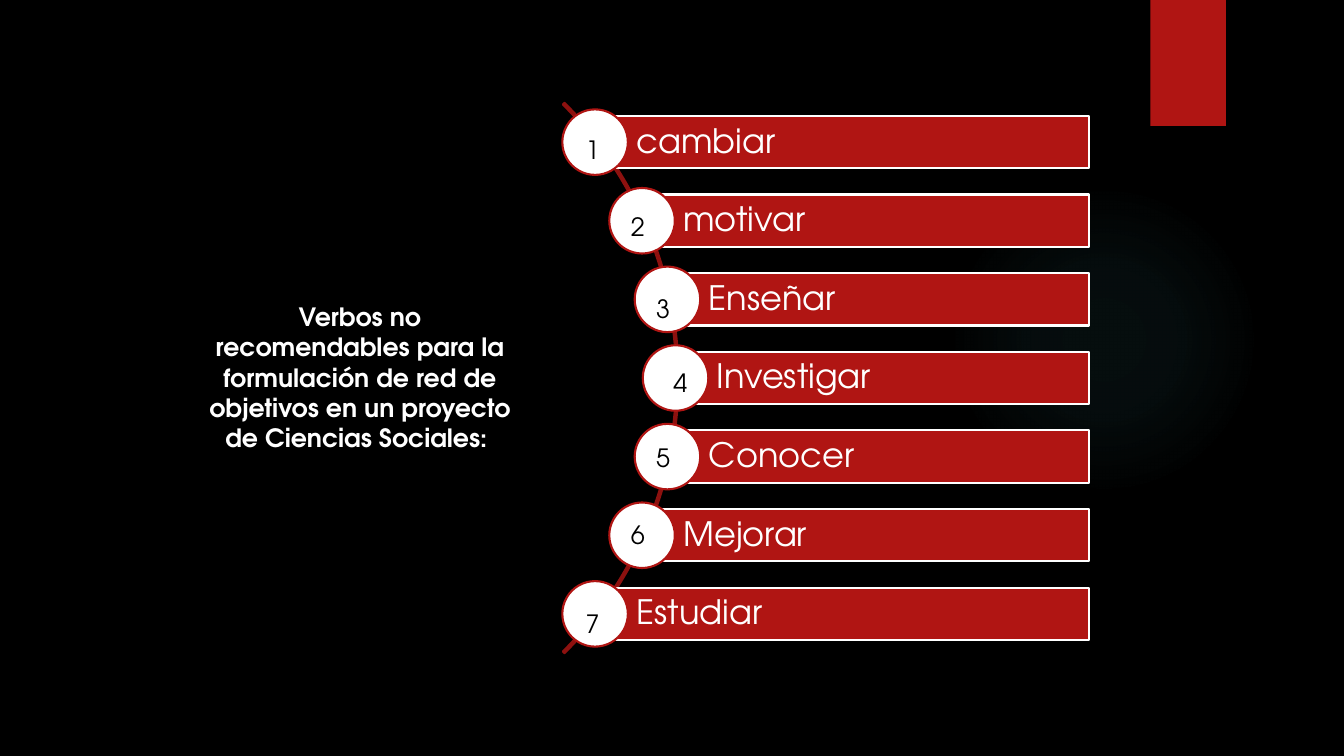
from math import sqrt

from lxml import etree
from pptx import Presentation
from pptx import util as u
from pptx.dml import color
from pptx.enum import shapes, text
from pptx.oxml import ns

FONT = "TeX Gyre Adventor"
RED, DARK_RED, WHITE, BLACK, TEAL = "B01513", "8D110F", "FFFFFF", "000000", "50B9C1"


def paint(fill, colour):
    if colour is None:
        fill.background()
    else:
        fill.solid()
        fill.fore_color.rgb = color.RGBColor.from_string(colour)


def write(frame, words, size=18, colour=BLACK, bold=False, align=text.PP_ALIGN.LEFT,
          anchor=text.MSO_ANCHOR.TOP, wrap=True, spacing=1.0, insets=(0.1, 0.05, 0.1, 0.05)):
    frame.word_wrap = wrap
    frame.auto_size = text.MSO_AUTO_SIZE.NONE
    frame.vertical_anchor = anchor
    frame.margin_left, frame.margin_top, frame.margin_right, frame.margin_bottom = map(u.Inches, insets)
    paragraph = frame.paragraphs[0]
    paragraph.text = words
    paragraph.alignment = align
    paragraph.line_spacing = spacing
    font = paragraph.font
    font.name, font.size, font.bold = FONT, u.Pt(size), bold
    paint(font.fill, colour)


deck = Presentation()
deck.slide_width, deck.slide_height = u.Inches(13.33), u.Inches(7.5)
slide = deck.slides.add_slide(deck.slide_layouts[5])
paint(slide.background.fill, BLACK)

heading = slide.shapes.title
heading.left, heading.top, heading.width, heading.height = map(u.Inches, (1.96, 2.94, 3.22, 1.62))
write(heading.text_frame,
      "Verbos no recomendables para la formulación de red de objetivos en un proyecto de Ciencias Sociales: ",
      colour=WHITE, bold=True, align=text.PP_ALIGN.CENTER)

verbs = ["cambiar", "motivar", "Enseñar", "Investigar", "Conocer", "Mejorar", "Estudiar"]
digit_corners = [(5.71, 1.28), (6.16, 2.05), (6.41, 2.86), (6.58, 3.59),
                 (6.41, 4.34), (6.16, 5.1), (5.71, 5.99)]
arc_x, arc_y, arc_radius, arc_size = 2.87, 3.75, 3.83, 7.72
row_pitch, bar_height, bar_right, circle = 0.78, 0.52, 10.8, 0.65
kinds = shapes.MSO_SHAPE

parts = [
    (kinds.OVAL, (9.41, 1.83, 3.08, 3.08), TEAL, None, ""),
    (kinds.RECTANGLE, (11.41, 0, 0.75, 1.25), RED, None, ""),
    (kinds.BLOCK_ARC, (arc_x - arc_size / 2, arc_y - arc_size / 2, arc_size, arc_size), None, DARK_RED, ""),
]
for row, verb in enumerate(verbs):
    rise = (row - len(verbs) // 2) * row_pitch
    x = arc_x + sqrt(arc_radius ** 2 - rise ** 2)
    y = arc_y + rise
    parts.append((kinds.RECTANGLE, (x, y - bar_height / 2, bar_right - x, bar_height), RED, WHITE, verb))
    parts.append((kinds.OVAL, (x - circle / 2, y - circle / 2, circle, circle), WHITE, RED, ""))

drawn = []
for kind, box, fill, edge, words in parts:
    part = slide.shapes.add_shape(kind, *map(u.Inches, box))
    part.shadow.inherit = False
    paint(part.fill, fill)
    paint(part.line.fill, edge)
    if edge:
        part.line.width = u.Pt(1.5)
    if words:
        write(part.text_frame, words, size=24, colour=WHITE, anchor=text.MSO_ANCHOR.MIDDLE,
              spacing=0.9, insets=(0.41, 0.07, 0.07, 0.07))
    drawn.append(part)

glow, ribbon, arc = drawn[:3]
for index, value in enumerate((189, 27, 0.003)):
    arc.adjustments[index] = value

stops = "".join(
    f'<a:gs pos="{place}000"><a:srgbClr val="{TEAL}"><a:alpha val="{alpha}000"/></a:srgbClr></a:gs>'
    for place, alpha in ((0, 7), (36, 6), (69, 0)))
gradient = etree.fromstring(
    f'<a:gradFill {ns.nsdecls("a")} rotWithShape="1"><a:gsLst>{stops}</a:gsLst>'
    '<a:path path="circle"><a:fillToRect l="50000" t="50000" r="50000" b="50000"/></a:path></a:gradFill>')
flat = glow._element.spPr.find(ns.qn("a:solidFill"))
flat.getparent().replace(flat, gradient)

for number, (left, top) in enumerate(digit_corners, start=1):
    digit = slide.shapes.add_textbox(*map(u.Inches, (left, top, 0.4, 0.4)))
    write(digit.text_frame, str(number), wrap=False)

deck.save("out.pptx")
